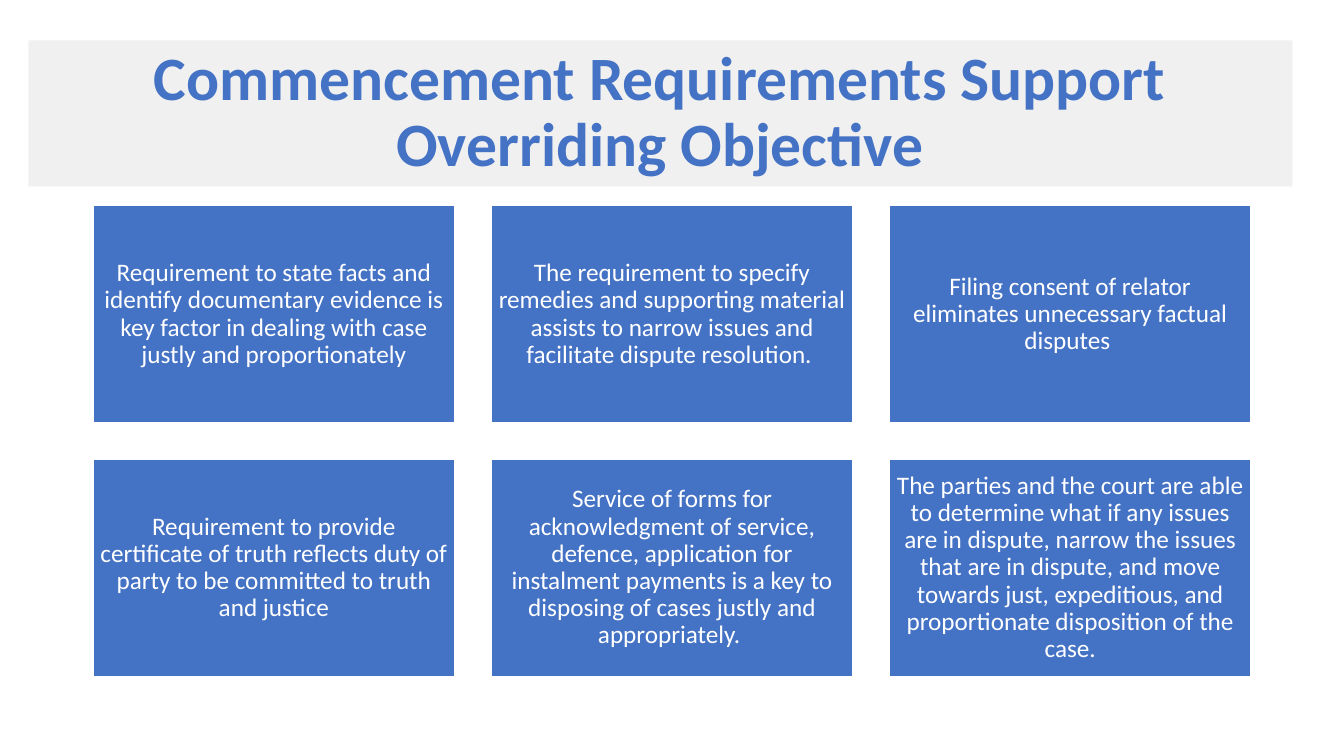
from pptx import Presentation
from pptx.dml.color import RGBColor
from pptx.enum.shapes import MSO_SHAPE as Shape
from pptx.enum.text import MSO_ANCHOR as Anchor, PP_ALIGN as Align
from pptx.util import Pt

BLUE = RGBColor(0x44, 0x72, 0xC4)
GREY = RGBColor(0xF1, 0xF0, 0xF0)
WHITE = RGBColor(0xFF, 0xFF, 0xFF)

HEADING = "Commencement Requirements Support Overriding Objective"
REQUIREMENTS = [
    "Requirement to state facts and identify documentary evidence is key factor "
    "in dealing with case justly and proportionately",
    "The requirement to specify remedies and supporting material assists to "
    "narrow issues and facilitate dispute resolution. ",
    "Filing consent of relator eliminates unnecessary factual disputes ",
    "Requirement to provide certificate of truth reflects duty of party to be "
    "committed to truth and justice",
    "Service of forms for acknowledgment of service, defence, application for "
    "instalment payments is a key to disposing of cases justly and appropriately. ",
    "The parties and the court are able to determine what if any issues are in "
    "dispute, narrow the issues that are in dispute, and move towards just, "
    "expeditious, and proportionate disposition of the case.",
]


class SlideBuilder:
    font = "Calibri"
    line_spacing = 0.9

    def __init__(self, slide):
        self.slide = slide

    def panel(self, left, top, width, height, fill, outline=None):
        """Add a filled rectangle, outlined only if a colour is given."""
        panel = self.slide.shapes.add_shape(
            Shape.RECTANGLE, Pt(left), Pt(top), Pt(width), Pt(height))
        panel.shadow.inherit = False
        panel.fill.solid()
        panel.fill.fore_color.rgb = fill
        if outline is None:
            panel.line.fill.background()
        else:
            panel.line.color.rgb = outline
            panel.line.width = Pt(1)
        return panel

    def label(self, panel, text, size, color, inset, bold=False):
        """Put centred text inside a panel."""
        frame = panel.text_frame
        frame.word_wrap = True
        frame.vertical_anchor = Anchor.MIDDLE
        frame.margin_left = frame.margin_right = Pt(inset)
        frame.margin_top = frame.margin_bottom = Pt(min(inset, 5))
        paragraph = frame.paragraphs[0]
        paragraph.alignment = Align.CENTER
        paragraph.line_spacing = self.line_spacing
        run = paragraph.add_run()
        run.text = text
        run.font.name = self.font
        run.font.size = Pt(size)
        run.font.bold = bold
        run.font.color.rgb = color

    def heading(self, text):
        banner = self.panel(20.2, 28.8, 902.9, 104.4, GREY)
        self.label(banner, text, 44, BLUE, inset=7.2, bold=True)

    def card_grid(self, texts, columns=3):
        left, top, width, height, gap = 66.4, 147, 258.5, 155.1, 25.9
        for index, text in enumerate(texts):
            row, column = divmod(index, columns)
            card = self.panel(left + column * (width + gap),
                              top + row * (height + gap),
                              width, height, BLUE, outline=WHITE)
            self.label(card, text, 18, WHITE, inset=5)


def main():
    deck = Presentation()
    deck.slide_width, deck.slide_height = Pt(960), Pt(540)
    builder = SlideBuilder(deck.slides.add_slide(deck.slide_layouts[6]))

    # Heading banner
    builder.heading(HEADING)

    # Two rows of requirement cards
    builder.card_grid(REQUIREMENTS)

    deck.save("out.pptx")


if __name__ == "__main__":
    main()
